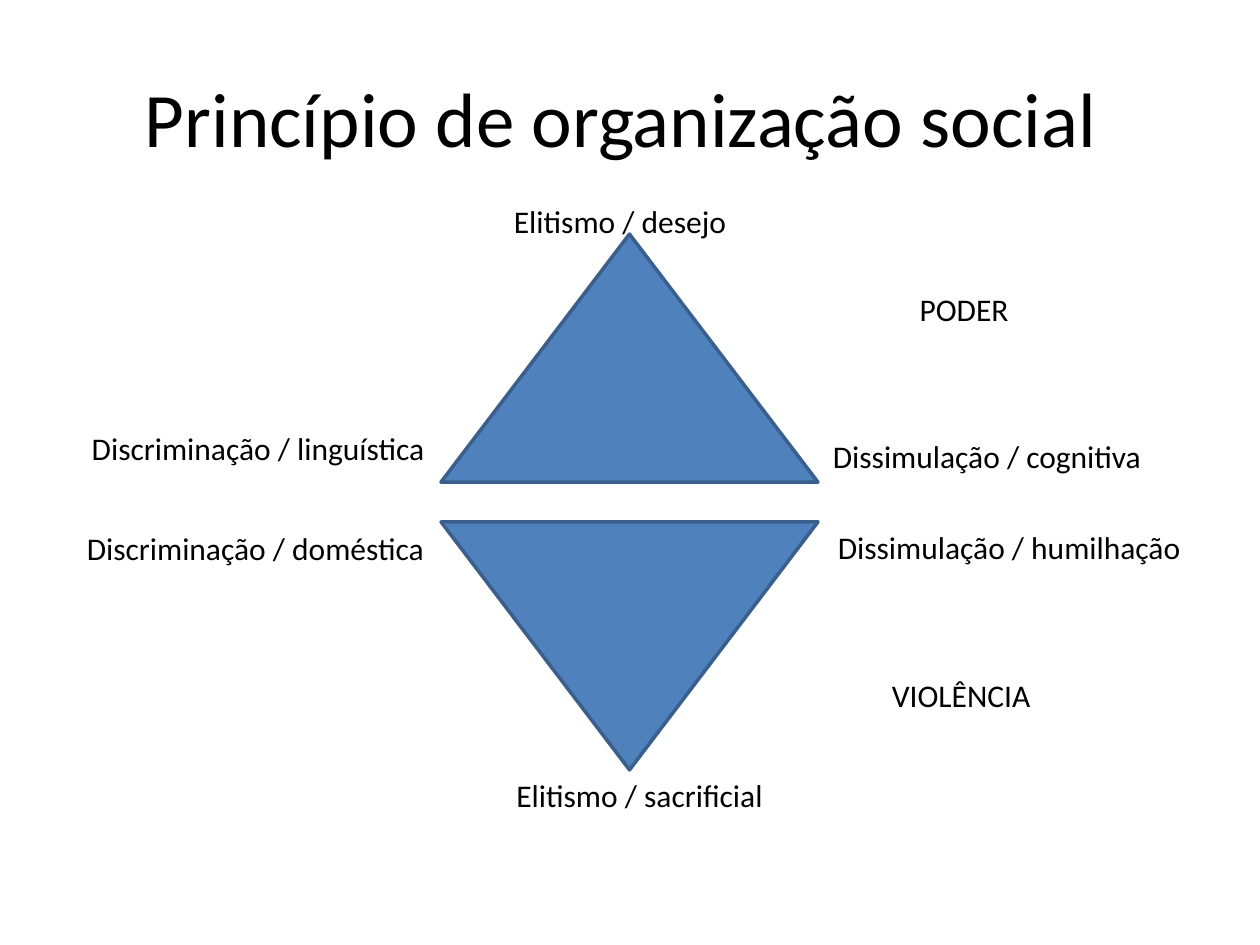
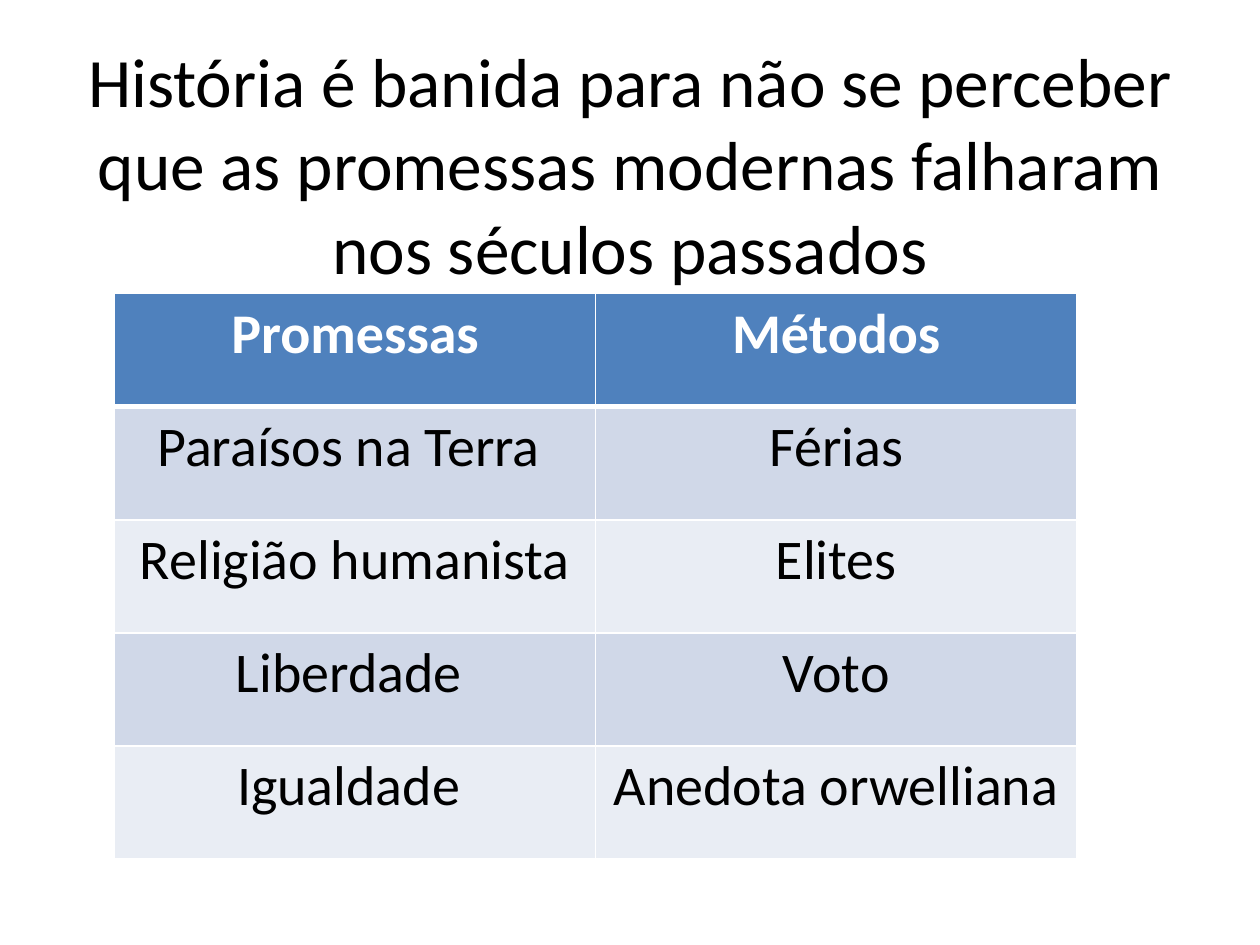
"""Build two slides on social organisation and modern promises."""
from lxml import etree
from pptx import Presentation
from pptx.dml.color import RGBColor
from pptx.enum.shapes import MSO_SHAPE
from pptx.enum.text import MSO_ANCHOR, MSO_AUTO_SIZE, PP_ALIGN
from pptx.oxml.ns import qn
from pptx.util import Cm, Pt

TRIANGLE = MSO_SHAPE.ISOSCELES_TRIANGLE
MIDDLE = MSO_ANCHOR.MIDDLE
FIT_SHAPE = MSO_AUTO_SIZE.SHAPE_TO_FIT_TEXT
NO_FIT = MSO_AUTO_SIZE.NONE
LEFT, CENTER = PP_ALIGN.LEFT, PP_ALIGN.CENTER

BLACK, WHITE = "000000", "FFFFFF"
BLUE, DARK_BLUE = "4F81BD", "3A5F8C"
BANDS = ("D0D8E8", "E9EDF4")

TITLE_FRAME = {"word_wrap": True, "auto_size": NO_FIT, "vertical_anchor": MIDDLE}
LABEL_FRAME = {"word_wrap": False, "auto_size": FIT_SHAPE}
LABEL_FONT = {"name": "Calibri", "size": Pt(18)}
HEADER_FONT = {"name": "Calibri", "size": Pt(32), "bold": True}
BODY_FONT = {**HEADER_FONT, "bold": False}

LABELS = [
    ("Discriminação / linguística", 1.6, 8.53, 7.32),
    ("Dissimulação / cognitiva", 16.54, 8.69, 7.39),
    ("Elitismo / desejo", 10.11, 3.94, 5.18),
    ("Elitismo / sacrificial", 10.16, 15.52, 5.92),
    ("Discriminação / doméstica", 1.5, 10.54, 7.39),
    ("Dissimulação / humilhação", 16.64, 10.52, 8.13),
    ("PODER", 18.29, 5.72, 2.79),
    ("VIOLÊNCIA", 17.73, 13.51, 3.94),
]
PROMISES = [
    ("Promessas", "Métodos"),
    ("Paraísos na Terra ", "Férias"),
    ("Religião humanista", "Elites"),
    ("Liberdade ", "Voto"),
    ("Igualdade ", "Anedota orwelliana"),
]


def color(hex_value):
    """Turn a hex string into a colour."""
    return RGBColor.from_string(hex_value)


def apply_format(target, values):
    """Set each attribute named in values on target."""
    for name, value in values.items():
        setattr(target, name, value)


def write(frame, text, font, ink=BLACK, align=LEFT):
    """Write one formatted paragraph into a text frame."""
    paragraph = frame.paragraphs[0]
    paragraph.alignment = align
    run = paragraph.add_run()
    run.text = text
    apply_format(run.font, font)
    run.font.color.rgb = color(ink)


def add_title(slide, text, top, size):
    """Add the centred slide title."""
    box = slide.shapes.add_textbox(Cm(1.27), Cm(top), Cm(22.86), Cm(3.18))
    apply_format(box.text_frame, TITLE_FRAME)
    write(box.text_frame, text, {"name": "Calibri", "size": Pt(size)}, align=CENTER)


def add_label(slide, text, left, top, width):
    """Add a one-line label."""
    box = slide.shapes.add_textbox(Cm(left), Cm(top), Cm(width), Cm(1.02))
    apply_format(box.text_frame, LABEL_FRAME)
    write(box.text_frame, text, LABEL_FONT)


def add_triangle(slide, top, rotation):
    """Add one of the two facing triangles."""
    triangle = slide.shapes.add_shape(TRIANGLE, Cm(8.89), Cm(top), Cm(7.6), Cm(5))
    triangle.rotation = rotation
    triangle.shadow.inherit = False
    triangle.fill.solid()
    triangle.fill.fore_color.rgb = color(BLUE)
    triangle.line.color.rgb = color(DARK_BLUE)
    triangle.line.width = Pt(2)


def add_borders(cell, top, bottom):
    """Draw white cell borders with the given top and bottom widths."""
    properties = cell._tc.get_or_add_tcPr()
    for side, width in {"L": 1, "R": 1, "T": top, "B": bottom}.items():
        line = etree.SubElement(properties, qn(f"a:ln{side}"), w=str(Pt(width)))
        fill = etree.SubElement(line, qn("a:solidFill"))
        etree.SubElement(fill, qn("a:srgbClr"), val=WHITE)


def add_promise_table(slide, rows):
    """Add the table with a blue header and banded rows."""
    column_width, row_height = Cm(9.7), Cm(2.28)
    columns = len(rows[0])
    table = slide.shapes.add_table(
        len(rows), columns, Cm(2.31), Cm(5.92),
        column_width * columns, row_height * len(rows)).table
    for row_index, texts in enumerate(rows):
        header = row_index == 0
        for column_index, text in enumerate(texts):
            cell = table.cell(row_index, column_index)
            add_borders(cell, 3 if row_index == 1 else 1, 3 if header else 1)
            cell.fill.solid()
            cell.fill.fore_color.rgb = color(BLUE if header else BANDS[(row_index - 1) % 2])
            write(cell.text_frame, text, HEADER_FONT if header else BODY_FONT,
                  WHITE if header else BLACK, CENTER)


def main():
    """Build and save both slides."""
    deck = Presentation()
    apply_format(deck, {"slide_width": Cm(25.4), "slide_height": Cm(19.05)})
    blank = deck.slide_layouts[6]

    organisation = deck.slides.add_slide(blank)
    add_title(organisation, "Princípio de organização social ", 0.76, 44)
    for top, rotation in ((4.72, 0), (10.52, 180)):
        add_triangle(organisation, top, rotation)
    for label in LABELS:
        add_label(organisation, *label)

    history = deck.slides.add_slide(blank)
    add_title(history, "História é banida para não se perceber que as promessas "
              "modernas falharam nos séculos passados", 1.7, 39.6)
    add_promise_table(history, PROMISES)

    deck.save("out.pptx")


if __name__ == "__main__":
    main()
